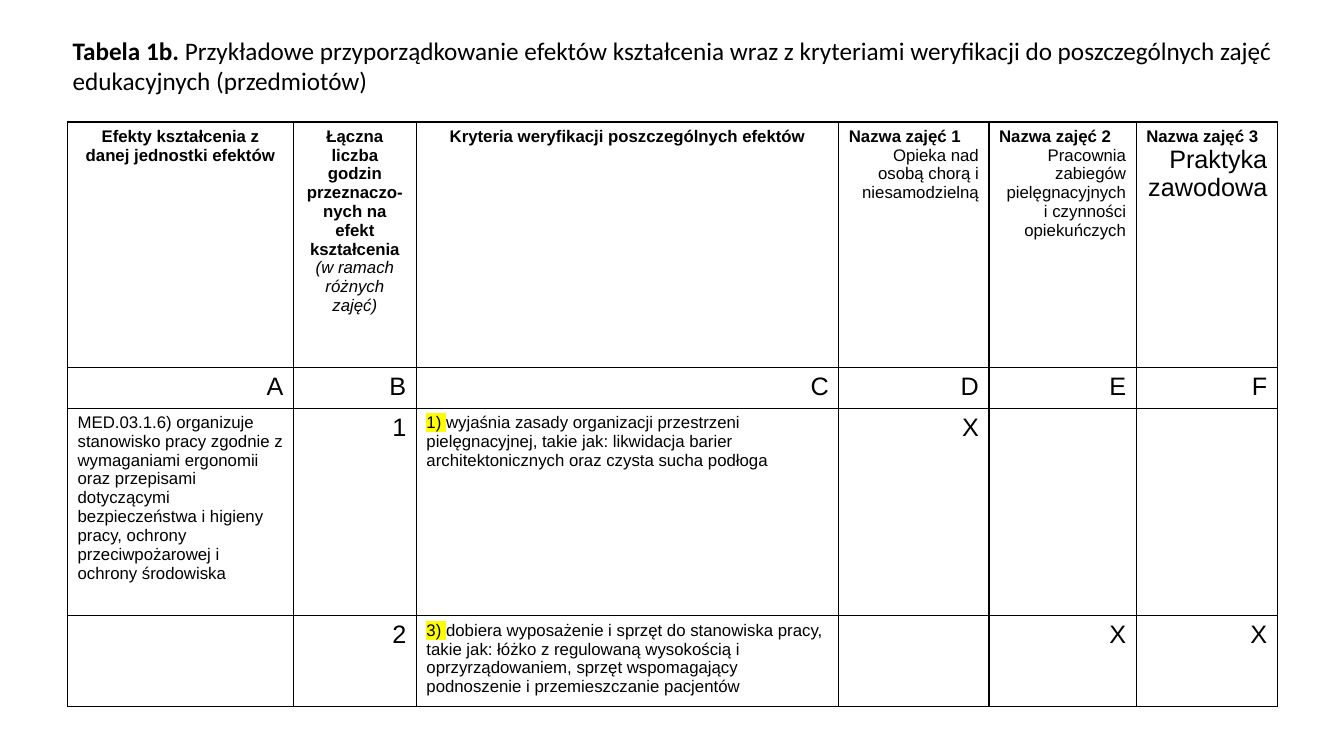
from lxml.etree import SubElement
from pptx import Presentation
from pptx.dml.color import RGBColor
from pptx.enum.text import MSO_ANCHOR, PP_ALIGN
from pptx.oxml import parse_xml
from pptx.oxml.ns import qn
from pptx.util import Inches, Pt

COLORS = {"ink": "000000", "page": "FFFFFF", "mark": "FFFF00"}
LEFT, MID, RIGHT = PP_ALIGN.LEFT, PP_ALIGN.CENTER, PP_ALIGN.RIGHT
NS = "http://schemas.openxmlformats.org/drawingml/2006/main"
WIDTHS = [2.24, 1.22, 4.19, 1.49, 1.46, 1.4]
HEIGHTS = [2.44, 0.37, 2.06, 0.85]

EFFECT = (
    "MED.03.1.6) organizuje stanowisko pracy zgodnie z wymaganiami ergonomii oraz "
    "przepisami dotyczącymi bezpieczeństwa i higieny pracy, ochrony "
    "przeciwpożarowej i ochrony środowiska"
)
SPACE = (
    "wyjaśnia zasady organizacji przestrzeni pielęgnacyjnej, takie jak: "
    "likwidacja barier architektonicznych oraz czysta sucha podłoga"
)
TOOLS = (
    "dobiera wyposażenie i sprzęt do stanowiska pracy, takie jak: łóżko z "
    "regulowaną wysokością i oprzyrządowaniem, sprzęt wspomagający podnoszenie i "
    "przemieszczanie pacjentów"
)
CLASSES = [
    ("Opieka nad osobą chorą i niesamodzielną", 12),
    ("Pracownia zabiegów pielęgnacyjnych i czynności opiekuńczych", 12),
    ("Praktyka zawodowa", 18),
]


def add_run(par, text, size=12, font="Arial", bold=False, italic=False, mark=None):
    """Add one formatted run of text to a paragraph."""
    run = par.add_run()
    run.text = text
    run.font.size = Pt(size)
    run.font.bold = bold
    run.font.italic = italic
    run.font.color.rgb = RGBColor.from_string(COLORS["ink"])
    run.font.name = font
    if mark:
        light = parse_xml(
            f'<a:highlight xmlns:a="{NS}"><a:srgbClr val="{COLORS[mark]}"/></a:highlight>'
        )
        run.font._element.find(qn("a:solidFill")).addnext(light)


def add_title(slide):
    """Add the table caption."""
    box = slide.shapes.add_textbox(Inches(0.67), Inches(0.3), Inches(12.03), Inches(0.85))
    frame = box.text_frame
    frame.word_wrap = True
    frame.margin_left = frame.margin_right = Inches(0.05)
    frame.margin_top = frame.margin_bottom = Inches(0.05)
    par = frame.paragraphs[0]
    add_run(par, "Tabela 1b. ", size=18, font="Calibri", bold=True)
    add_run(
        par,
        "Przykładowe przyporządkowanie efektów kształcenia wraz z kryteriami "
        "weryfikacji do poszczególnych zajęć edukacyjnych (przedmiotów)",
        size=18,
        font="Calibri",
    )


def style_cell(cell):
    """Give a cell a thin border and a plain fill."""
    props = cell._tc.get_or_add_tcPr()
    for side in ("lnL", "lnR", "lnT", "lnB"):
        line = SubElement(props, qn(f"a:{side}"), w=str(Pt(1)))
        fill = SubElement(line, qn("a:solidFill"))
        SubElement(fill, qn("a:srgbClr"), val=COLORS["ink"])
    cell.fill.solid()
    cell.fill.fore_color.rgb = RGBColor.from_string(COLORS["page"])
    cell.vertical_anchor = MSO_ANCHOR.TOP


def add_grid(slide):
    """Add the empty table with its column and row sizes."""
    frame = slide.shapes.add_table(
        len(HEIGHTS), len(WIDTHS), Inches(0.67), Inches(1.21),
        Inches(sum(WIDTHS)), Inches(sum(HEIGHTS)),
    )
    table = frame.table
    table.first_row = table.horz_banding = False
    for col, width in zip(table.columns, WIDTHS):
        col.width = Inches(width)
    for row, height in zip(table.rows, HEIGHTS):
        row.height = Inches(height)
    for cell in table.iter_cells():
        style_cell(cell)
    return table


def fill_cell(table, row, col, *runs, align=RIGHT):
    """Write text and format pairs into the first paragraph of a cell."""
    par = table.cell(row, col).text_frame.paragraphs[0]
    par.alignment = align
    for text, form in runs:
        add_run(par, text, **form)


def fill_head(table):
    """Write the header row."""
    bold = {"bold": True}
    fill_cell(table, 0, 0, ("Efekty kształcenia z danej jednostki efektów", bold), align=MID)
    fill_cell(
        table, 0, 1,
        ("Łączna liczba godzin przeznaczo-nych na efekt kształcenia ", bold),
        ("(w ramach różnych zajęć)", {"italic": True}),
        align=MID,
    )
    fill_cell(table, 0, 2, ("Kryteria weryfikacji poszczególnych efektów", bold), align=MID)
    for num, (name, size) in enumerate(CLASSES, 1):
        col = num + 2
        fill_cell(table, 0, col, (f"Nazwa zajęć {num}", bold), align=LEFT)
        par = table.cell(0, col).text_frame.add_paragraph()
        par.alignment = RIGHT
        add_run(par, name, size=size)


def fill_body(table):
    """Write the letters, the effect, the criteria and the crosses."""
    large = {"size": 18}
    for col, letter in enumerate("ABCDEF"):
        fill_cell(table, 1, col, (letter, large))
    fill_cell(table, 2, 0, (EFFECT, {}), align=LEFT)
    rows = [("1", "1) ", SPACE, [3]), ("2", "3) ", TOOLS, [4, 5])]
    for row, (hours, label, text, cols) in enumerate(rows, 2):
        fill_cell(table, row, 1, (hours, large))
        fill_cell(table, row, 2, (label, {"mark": "mark"}), (text, {}), align=LEFT)
        for col in cols:
            fill_cell(table, row, col, ("X", large))


def main():
    """Build and save the slide."""
    deck = Presentation()
    deck.slide_width, deck.slide_height = Inches(13.33), Inches(7.5)
    slide = deck.slides.add_slide(deck.slide_layouts[6])
    add_title(slide)
    table = add_grid(slide)
    fill_head(table)
    fill_body(table)
    deck.save("out.pptx")


if __name__ == "__main__":
    main()
